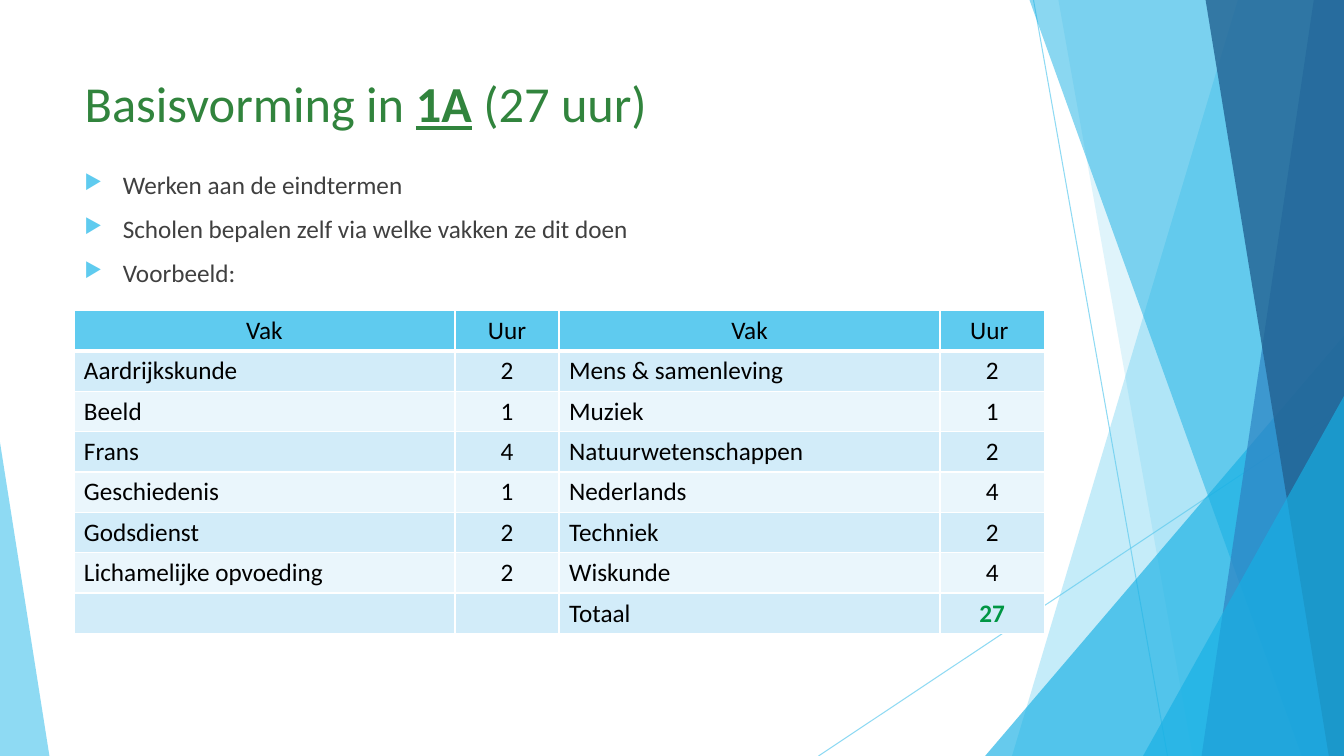
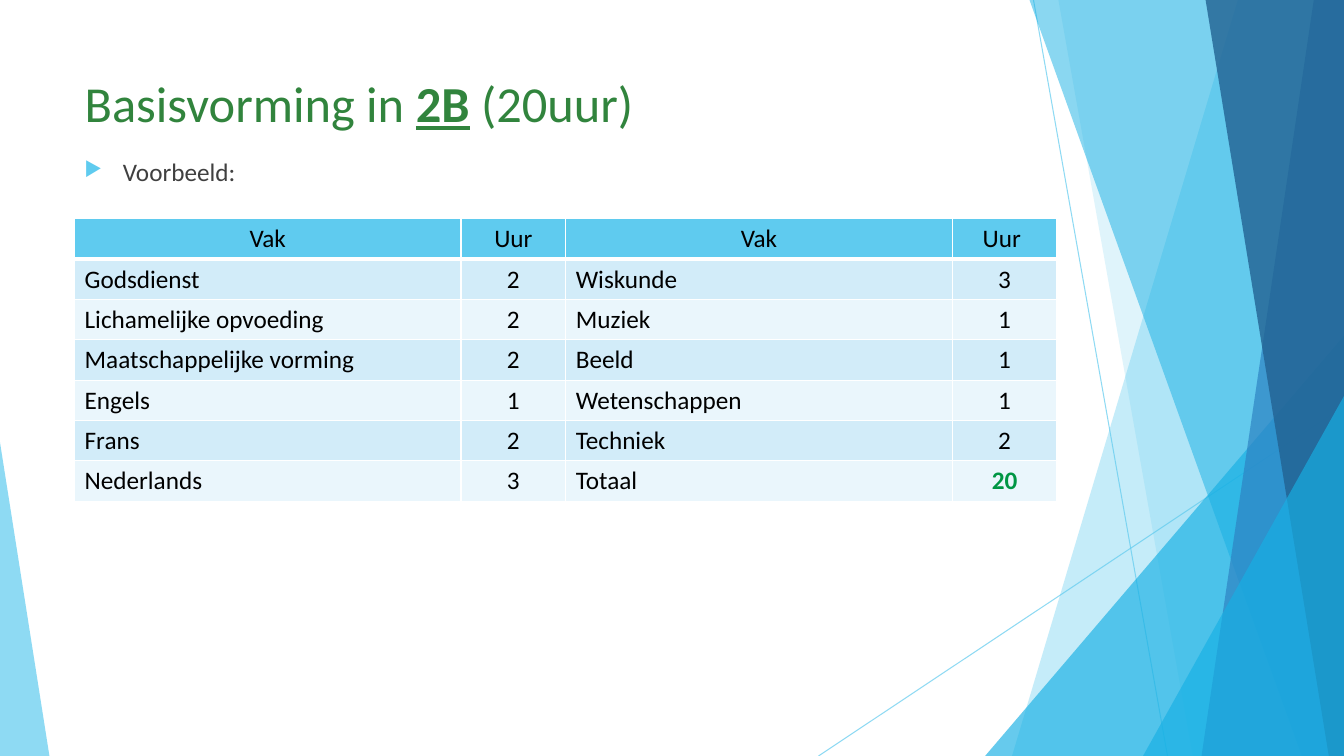
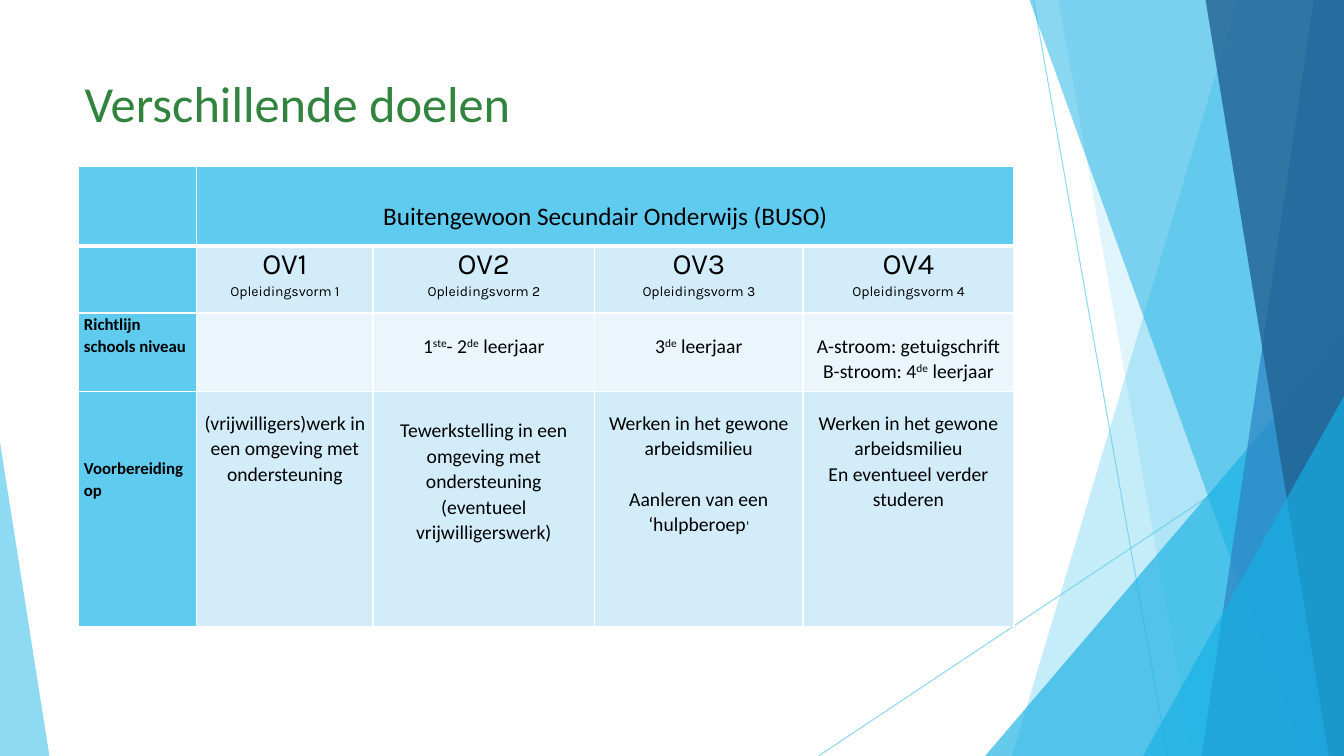
from lxml import etree
from pptx import Presentation
from pptx.dml.color import RGBColor
from pptx.enum.shapes import MSO_CONNECTOR, MSO_SHAPE
from pptx.enum.text import MSO_ANCHOR, MSO_AUTO_SIZE, PP_ALIGN
from pptx.oxml.ns import qn
from pptx.util import Inches, Pt

LEFT, CENTER = PP_ALIGN.LEFT, PP_ALIGN.CENTER
TOP = MSO_ANCHOR.TOP
FIXED = MSO_AUTO_SIZE.NONE
STRAIGHT = MSO_CONNECTOR.STRAIGHT
TRIANGLE = MSO_SHAPE.ISOSCELES_TRIANGLE

SKY, AZURE, BLUE, NAVY = "5FCBEF", "17B0E4", "2E83C3", "226292"
WHITE, BLACK, GREY = "FFFFFF", "000000", "404040"
TITLE_GREEN, TOTAL_GREEN = "31843D", "009644"
ROW_TINTS = ("D2ECF9", "EAF6FC")
BODY_FONT, LABEL_FONT = "Calibri", "Karla"
TITLE_ONLY = 5


def color(hex_string):
    return RGBColor.from_string(hex_string)


def child(parent, tag, **attributes):
    return etree.SubElement(parent, qn(tag), attributes)


def set_alpha(element, percent):
    for rgb in element.iter(qn("a:srgbClr")):
        child(rgb, "a:alpha", val=str(percent * 1000))


def write(frame, paragraphs, align=LEFT, spacing=None, before=0, bullet=False, **style):
    base = dict(size=18, font=BODY_FONT, ink=BLACK, bold=False, underline=False, raised=False)
    for index, runs in enumerate(paragraphs):
        paragraph = frame.add_paragraph() if index else frame.paragraphs[0]
        paragraph.alignment = align
        if spacing:
            paragraph.line_spacing = spacing
        if before and index:
            paragraph.space_before = Pt(before)
        if bullet:
            add_bullet(paragraph)
        for part in [runs] if isinstance(runs, str) else runs:
            words, extra = (part, {}) if isinstance(part, str) else part
            look = {**base, **style, **extra}
            run = paragraph.add_run()
            run.text = words
            run.font.size = Pt(look["size"])
            run.font.name = look["font"]
            run.font.bold = look["bold"]
            run.font.underline = look["underline"]
            run.font.color.rgb = color(look["ink"])
            if look["raised"]:
                run._r.get_or_add_rPr().set("baseline", "30000")


def add_bullet(paragraph):
    properties = paragraph._p.get_or_add_pPr()
    properties.set("marL", str(Inches(0.38)))
    properties.set("indent", str(-Inches(0.38)))
    child(child(properties, "a:buClr"), "a:srgbClr", val=SKY)
    child(properties, "a:buSzPct", val="80000")
    child(properties, "a:buChar", char="▶")


class Deck:
    def __init__(self):
        self.file = Presentation()
        self.file.slide_width, self.file.slide_height = Inches(13.33), Inches(7.5)
        self.layout = self.file.slide_layouts[TITLE_ONLY]
        self.slide = None

    def x(self, percent):
        return round(self.file.slide_width * percent / 100)

    def y(self, percent):
        return round(self.file.slide_height * percent / 100)

    def new_slide(self, title):
        self.slide = self.file.slides.add_slide(self.layout)
        if len(self.file.slides) == 1:
            self.build_layout()
        heading = self.slide.shapes.title
        heading.left, heading.top = self.x(5.55), self.y(8.93)
        heading.width, heading.height = self.x(70.5), self.y(12.8)
        frame = heading.text_frame
        frame.vertical_anchor, frame.auto_size = TOP, FIXED
        write(frame, [title], size=36, ink=TITLE_GREEN)

    def build_layout(self):
        for holder in list(self.layout.placeholders)[1:]:
            holder.element.getparent().remove(holder.element)
        facets = [
            self.ray((76.9, 0), (86.87, 100)),
            self.ray((100, 53.73), (60.9, 100)),
            self.band(92.1, 75.3, SKY, 36),
            self.band(78.75, 88.75, SKY, 20),
            self.corner(73.3, 100, 44.4, AZURE, 66),
            self.band(76.6, 96.85, AZURE, 50),
            self.band(97.75, 89.4, BLUE, 70),
            self.band(89.7, 98.87, NAVY, 80),
            self.corner(85.05, 100, 52.4, AZURE, 66),
            self.corner(0, 3.68, 58.5, SKY, 70, peak=0),
        ]
        for facet in facets:
            self.layout.shapes.element.append(facet.element)

    def ray(self, start, end):
        ray = self.slide.shapes.add_connector(
            STRAIGHT, self.x(start[0]), self.y(start[1]), self.x(end[0]), self.y(end[1]))
        ray.line.width = Pt(0.75)
        ray.line.color.rgb = color(SKY)
        set_alpha(ray.element, 70)
        child(ray.element.spPr, "a:effectLst")
        return ray

    def paint(self, shape, fill, alpha):
        shape.shadow.inherit = False
        shape.fill.solid()
        shape.fill.fore_color.rgb = color(fill)
        shape.line.fill.background()
        set_alpha(shape.element, alpha)
        return shape

    def band(self, upper, lower, fill, alpha):
        outline = self.slide.shapes.build_freeform(self.x(upper), 0)
        outline.add_line_segments(
            [(self.x(across), self.y(down)) for across, down in ((100, 0), (100, 100), (lower, 100))])
        return self.paint(outline.convert_to_shape(), fill, alpha)

    def corner(self, left, right, top, fill, alpha, peak=1):
        corner = self.slide.shapes.add_shape(
            TRIANGLE, self.x(left), self.y(top), self.x(right - left), self.y(100 - top))
        corner.adjustments[0] = peak
        return self.paint(corner, fill, alpha)

    def bullets(self, top, height, lines):
        box = self.slide.shapes.add_textbox(self.x(5.55), self.y(top), self.x(70.5), self.y(height))
        box.text_frame.word_wrap = True
        write(box.text_frame, lines, before=10, bullet=True, ink=GREY)

    def table(self, left, top, widths, heights, heading_column=False):
        table = self.slide.shapes.add_table(
            len(heights), len(widths), self.x(left), self.y(top),
            self.x(sum(widths)), self.y(sum(heights))).table
        table.horz_banding = False
        for column, width in zip(table.columns, widths):
            column.width = self.x(width)
        for row, height in zip(table.rows, heights):
            row.height = self.y(height)
        for r in range(len(heights)):
            for c in range(len(widths)):
                heading = r == 0 or (heading_column and c == 0)
                self.dress(table.cell(r, c), SKY if heading else ROW_TINTS[(r - 1) % 2], r)
        return table

    def dress(self, cell, fill, row):
        weights = {"L": 1, "R": 1, "T": 3 if row == 1 else 1, "B": 3 if row == 0 else 1}
        properties = cell._tc.get_or_add_tcPr()
        for side, weight in weights.items():
            edge = child(properties, "a:ln" + side, w=str(Pt(weight)))
            child(child(edge, "a:solidFill"), "a:srgbClr", val=WHITE)
        cell.fill.solid()
        cell.fill.fore_color.rgb = color(fill)

    def hours_table(self, left, top, subject_width, hour_width, lessons, total):
        rows = [("Vak", "Uur", "Vak", "Uur "), *lessons]
        table = self.table(left, top, [subject_width, hour_width] * 2, [5.33] * len(rows))
        for r, row in enumerate(rows):
            for c, entry in enumerate(row):
                if entry:
                    strong = dict(bold=True, ink=TOTAL_GREEN) if entry == total else {}
                    write(table.cell(r, c).text_frame, [entry],
                          align=CENTER if r == 0 or c % 2 else LEFT, **strong)

    def goal(self, cell, paragraphs, gap=0, align=CENTER, **style):
        cell.margin_left = cell.margin_right = self.x(0.45)
        cell.margin_top, cell.margin_bottom = self.y(gap), 0
        write(cell.text_frame, paragraphs, align=align, spacing=1.07, **style)


def course_title(group, hours):
    return ["Basisvorming in ", (group, dict(bold=True, underline=True)), f" ({hours})"]


def raised(ending):
    return ending, dict(raised=True)


def main():
    deck = Deck()

    deck.new_slide(course_title("1A", "27 uur"))
    deck.bullets(21.73, 18, [
        "Werken aan de eindtermen",
        "Scholen bepalen zelf via welke vakken ze dit doen",
        "Voorbeeld:",
    ])
    deck.hours_table(5.5, 41.07, 28.35, 7.75, [
        ("Aardrijkskunde", "2", "Mens & samenleving", "2"),
        ("Beeld", "1", "Muziek", "1"),
        ("Frans", "4", "Natuurwetenschappen", "2"),
        ("Geschiedenis", "1", "Nederlands", "4"),
        ("Godsdienst", "2", "Techniek", "2"),
        ("Lichamelijke opvoeding", "2", "Wiskunde", "4"),
        ("", "", "Totaal", "27"),
    ], total="27")

    deck.new_slide(course_title("2B", "20uur"))
    deck.bullets(20, 6, ["Voorbeeld:"])
    deck.hours_table(5.55, 28.93, 28.75, 7.8, [
        ("Godsdienst", "2", "Wiskunde", "3"),
        ("Lichamelijke opvoeding", "2", "Muziek", "1"),
        ("Maatschappelijke vorming", "2", "Beeld", "1"),
        ("Engels", "1", "Wetenschappen", "1"),
        ("Frans", "2", "Techniek", "2"),
        ("Nederlands", "3", "Totaal", "20"),
    ], total="20")

    deck.new_slide("Verschillende doelen")
    goals = deck.table(5.8, 22, [8.85, 13.1, 16.5, 15.5, 15.7], [10.5, 8.9, 10.4, 31.1],
                       heading_column=True)
    goals.cell(0, 1).merge(goals.cell(0, 4))
    deck.goal(goals.cell(0, 1), ["Buitengewoon Secundair Onderwijs (BUSO)"], gap=4.35)
    for number in range(1, 5):
        deck.goal(goals.cell(1, number),
                  [[(f"OV{number}", dict(size=21))], f"Opleidingsvorm {number}"],
                  size=10, font=LABEL_FONT)

    for row, label, gap in ((2, "Richtlijn schools niveau", 0), (3, "Voorbereiding op", 8.7)):
        deck.goal(goals.cell(row, 0), [label], gap=gap, align=LEFT, size=12, bold=True)

    levels = [
        [["1", raised("ste"), "- 2", raised("de"), " leerjaar"]],
        [["3", raised("de"), " leerjaar"]],
        ["A-stroom: getuigschrift", ["B-stroom: 4", raised("de"), " leerjaar"]],
    ]
    for column, level in enumerate(levels, 2):
        deck.goal(goals.cell(2, column), level, gap=2.66, size=14)

    workplace = "Werken in het gewone arbeidsmilieu"
    prospects = [
        (["(vrijwilligers)werk in een omgeving met ondersteuning"], 2.42, 0),
        (["Tewerkstelling in een omgeving met ondersteuning",
          "(eventueel vrijwilligerswerk)"], 3.39, 0),
        ([workplace, ["Aanleren van een ‘hulpberoep", ("’", dict(size=10))]], 2.42, 18),
        ([workplace, "En eventueel verder studeren"], 2.42, 0),
    ]
    for column, (prospect, gap, before) in enumerate(prospects, 1):
        deck.goal(goals.cell(3, column), prospect, gap=gap, before=before, size=14)

    deck.file.save("out.pptx")


if __name__ == "__main__":
    main()
